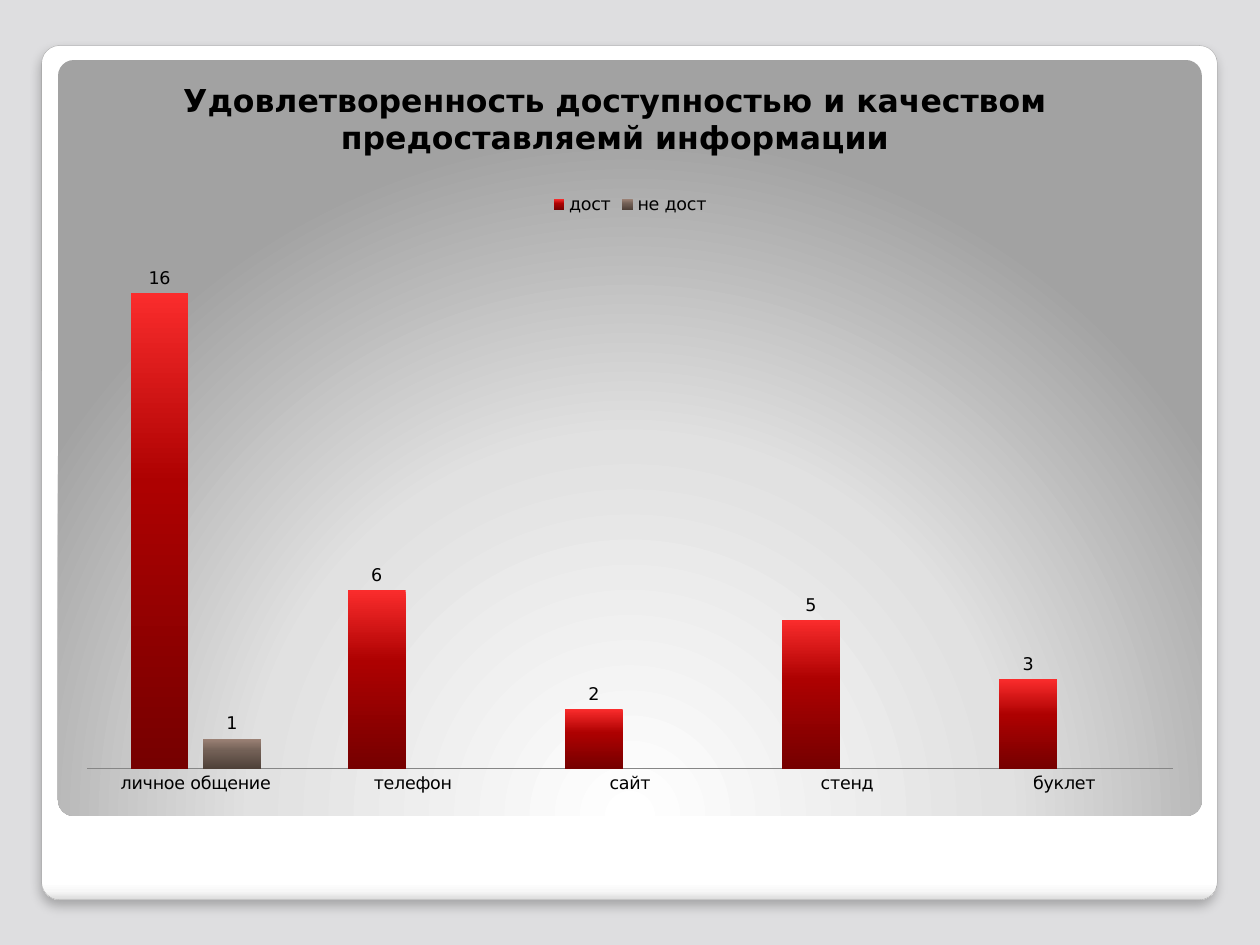
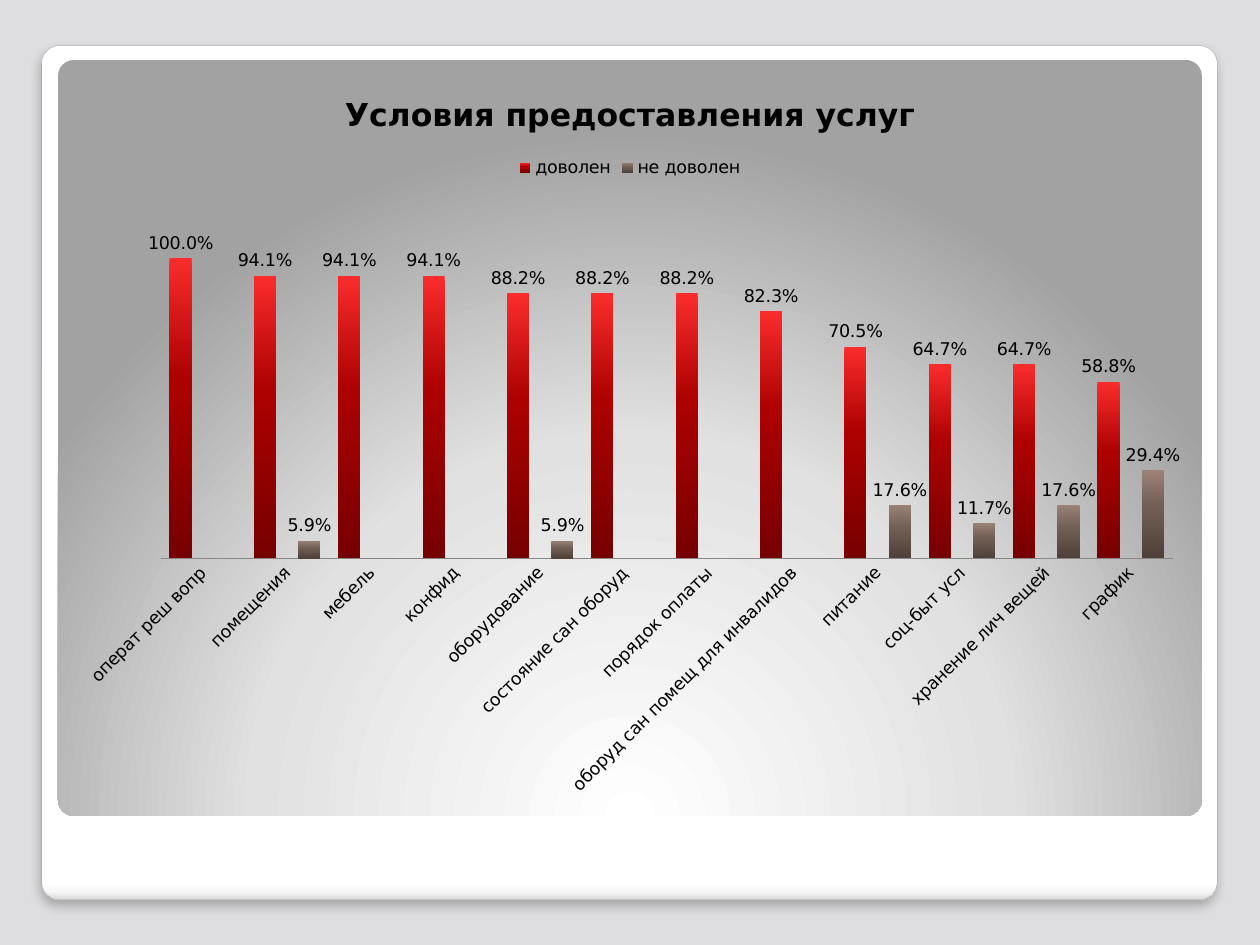
import lxml.etree
import pptx
import pptx.chart.data
import pptx.dml.color
import pptx.enum.chart
import pptx.enum.shapes
import pptx.oxml
import pptx.oxml.ns
import pptx.util

Cm = pptx.util.Cm
Pt = pptx.util.Pt
RGBColor = pptx.dml.color.RGBColor
qn = pptx.oxml.ns.qn

BACKGROUND = RGBColor(0xDE, 0xDE, 0xE0)
BLACK = RGBColor(0, 0, 0)
WHITE = RGBColor(0xFF, 0xFF, 0xFF)
FRAME_LINE = RGBColor(0xA4, 0xA4, 0xA4)
AXIS_LINE = RGBColor(0x86, 0x86, 0x86)
FRAME_EDGE = RGBColor(0xF7, 0xF7, 0xF7)
FRAME_BOTTOM = RGBColor(0xDA, 0xDA, 0xDA)
PANEL_MIDDLE = RGBColor(0xE1, 0xE1, 0xE1)
PANEL_OUTER = RGBColor(0xA2, 0xA2, 0xA2)
RED_LIGHT = RGBColor(0xFA, 0x2C, 0x2C)
RED = RGBColor(0xAD, 0x01, 0x01)
RED_DARK = RGBColor(0x76, 0x00, 0x00)
BROWN_LIGHT = RGBColor(0x9C, 0x82, 0x76)
BROWN = RGBColor(0x72, 0x60, 0x56)
BROWN_DARK = RGBColor(0x4E, 0x40, 0x38)

FONT = "DejaVu Sans"
FRAME_BOX = (0.84, 0.92, 23.7, 17.22)
PANEL_BOX = (1.17, 1.21, 23.06, 15.24)
CHART_INSET = 0.13
FRAME_STOPS = ((0, WHITE), (98, WHITE), (99, FRAME_EDGE), (100, FRAME_BOTTOM))
PANEL_STOPS = ((0, WHITE), (55, PANEL_MIDDLE), (100, PANEL_OUTER))
SERIES_STOPS = (
    ((0, RED_LIGHT), (40, RED), (100, RED_DARK)),
    ((0, BROWN_LIGHT), (40, BROWN), (100, BROWN_DARK)),
)
DOWNWARD = '<a:lin ang="5400000" scaled="0"/>'
FROM_BELOW = ('<a:path path="circle"><a:fillToRect l="50000" t="175000" '
              'r="50000" b="-75000"/></a:path>')

CHARTS = (
    {
        "title": "Удовлетворенность доступностью и качеством предоставляемй информации",
        "title_corner": (0.1, 0.01),
        "categories": ("личное общение", "телефон", "сайт", "стенд", "буклет"),
        "series": (
            ("дост", (16, 6, 2, 5, 3)),
            ("не дост", (1, None, None, None, None)),
        ),
        "number_format": "General",
        "maximum": 18,
        "rotation": 0,
        "gap_width": 150,
        "overlap": -25,
        "plot_box": (0.02, 0.225, 0.96, 0.72),
    },
    {
        "title": "Условия предоставления услуг",
        "title_corner": None,
        "categories": (
            "операт реш вопр", "помещения", "мебель", "конфид", "оборудование",
            "состояние сан оборуд", "порядок оплаты",
            "оборуд сан помещ для инвалидов", "питание", "соц-быт усл",
            "хранение лич вещей", "график",
        ),
        "series": (
            ("доволен", (1, 0.941, 0.941, 0.941, 0.882, 0.882, 0.882, 0.823,
                         0.705, 0.647, 0.647, 0.588)),
            ("не доволен", (None, 0.059, None, None, 0.059, None, None, None,
                            0.176, 0.117, 0.176, 0.294)),
        ),
        "number_format": "0.0%",
        "maximum": 1.2,
        "rotation": -45,
        "gap_width": 80,
        "overlap": -100,
        "plot_box": (0.085, 0.177, 0.895, 0.485),
    },
)


def set_gradient(fill, properties, stops, direction):
    """Fill the owner of the shape properties with a gradient."""
    fill.solid()
    stop_list = "".join(
        f'<a:gs pos="{position * 1000}"><a:srgbClr val="{color}"/></a:gs>'
        for position, color in stops)
    gradient = pptx.oxml.parse_xml(
        f'<a:gradFill xmlns:a="{pptx.oxml.ns.nsuri("a")}" rotWithShape="1">'
        f'<a:gsLst>{stop_list}</a:gsLst>{direction}</a:gradFill>')
    properties.replace(properties.find(qn("a:solidFill")), gradient)


def add_rounded_box(slide, box, stops, direction):
    """Add a rounded rectangle with a gradient and no outline."""
    shape = slide.shapes.add_shape(
        pptx.enum.shapes.MSO_SHAPE.ROUNDED_RECTANGLE, *map(Cm, box))
    shape.adjustments[0] = 0.021
    set_gradient(shape.fill, shape.element.spPr, stops, direction)
    shape.line.fill.background()
    shape.shadow.inherit = False
    return shape


def add_backdrop(slide):
    """Draw the background, the shadowed frame and the grey panel."""
    slide.background.fill.solid()
    slide.background.fill.fore_color.rgb = BACKGROUND
    frame = add_rounded_box(slide, FRAME_BOX, FRAME_STOPS, DOWNWARD)
    frame.line.color.rgb = FRAME_LINE
    frame.line.width = Pt(0.16)
    shadow = lxml.etree.SubElement(
        frame.element.spPr.find(qn("a:effectLst")), qn("a:outerShdw"),
        blurRad=str(Pt(6)), dist=str(Pt(4)), dir="5400000", rotWithShape="0")
    color = lxml.etree.SubElement(shadow, qn("a:srgbClr"), val=str(BLACK))
    lxml.etree.SubElement(color, qn("a:alpha"), val="25000")
    add_rounded_box(slide, PANEL_BOX, PANEL_STOPS, FROM_BELOW)


def set_layout(chart, part_name, index, settings):
    """Give a chart part a manual layout, in fractions of the chart."""
    part = chart.element.find(f".//{qn(part_name)}")
    for old_layout in part.findall(qn("c:layout")):
        part.remove(old_layout)
    layout = lxml.etree.Element(qn("c:layout"))
    manual = lxml.etree.SubElement(layout, qn("c:manualLayout"))
    for name, value in settings:
        lxml.etree.SubElement(manual, qn(f"c:{name}"), val=str(value))
    part.insert(index, layout)


def place_parts(chart, plot_box, title_corner):
    """Fix the inner plot area and, if a corner is given, the title."""
    modes = [("xMode", "edge"), ("yMode", "edge")]
    set_layout(chart, "c:plotArea", 0,
               [("layoutTarget", "inner"), *modes, *zip("xywh", plot_box)])
    if title_corner:
        set_layout(chart, "c:title", 1, [*modes, *zip("xy", title_corner)])


def style_axes(chart, maximum, rotation):
    """Keep only the category line and its labels."""
    chart.value_axis.visible = False
    chart.value_axis.has_major_gridlines = False
    chart.value_axis.minimum_scale = 0
    chart.value_axis.maximum_scale = maximum
    axis = chart.category_axis
    axis.major_tick_mark = pptx.enum.chart.XL_TICK_MARK.NONE
    axis.format.line.color.rgb = AXIS_LINE
    axis.format.line.width = Pt(0.75)
    axis.tick_labels.font.size = Pt(10)
    body = chart.element.find(
        f".//{qn('c:catAx')}/{qn('c:txPr')}/{qn('a:bodyPr')}")
    body.set("rot", str(rotation * 60000))


def style_series(series, stops, number_format):
    """Colour the columns of a series and label them with values."""
    set_gradient(series.format.fill, series.format.fill._xPr, stops, DOWNWARD)
    labels = series.data_labels
    labels.show_value = True
    labels.number_format = number_format
    labels.number_format_is_linked = False
    labels.position = pptx.enum.chart.XL_LABEL_POSITION.OUTSIDE_END


def add_column_chart(slide, box, content):
    """Add a clustered column chart inside the given panel box."""
    data = pptx.chart.data.CategoryChartData(content["number_format"])
    data.categories = content["categories"]
    for name, values in content["series"]:
        data.add_series(name, values)
    left, top, width, height = box
    chart = slide.shapes.add_chart(
        pptx.enum.chart.XL_CHART_TYPE.COLUMN_CLUSTERED,
        Cm(left + CHART_INSET), Cm(top + CHART_INSET),
        Cm(width - 2 * CHART_INSET), Cm(height - 2 * CHART_INSET), data).chart
    chart.font.name = FONT
    chart.font.size = Pt(10)
    chart.font.color.rgb = BLACK
    chart.has_title = True
    chart.chart_title.text_frame.text = content["title"]
    title_font = chart.chart_title.text_frame.paragraphs[0].font
    title_font.name = FONT
    title_font.size = Pt(18)
    title_font.bold = True
    title_font.color.rgb = BLACK
    chart.has_legend = True
    chart.legend.position = pptx.enum.chart.XL_LEGEND_POSITION.TOP
    chart.legend.include_in_layout = False
    plot = chart.plots[0]
    plot.vary_by_categories = False
    plot.gap_width = content["gap_width"]
    plot.overlap = content["overlap"]
    for series, stops in zip(plot.series, SERIES_STOPS):
        style_series(series, stops, content["number_format"])
    style_axes(chart, content["maximum"], content["rotation"])
    place_parts(chart, content["plot_box"], content["title_corner"])


def main():
    """Build both chart slides and save the presentation."""
    presentation = pptx.Presentation()
    presentation.slide_width = Cm(25.4)
    presentation.slide_height = Cm(19.05)
    for content in CHARTS:
        slide = presentation.slides.add_slide(presentation.slide_layouts[6])
        add_backdrop(slide)
        add_column_chart(slide, PANEL_BOX, content)
    presentation.save("out.pptx")


if __name__ == "__main__":
    main()
